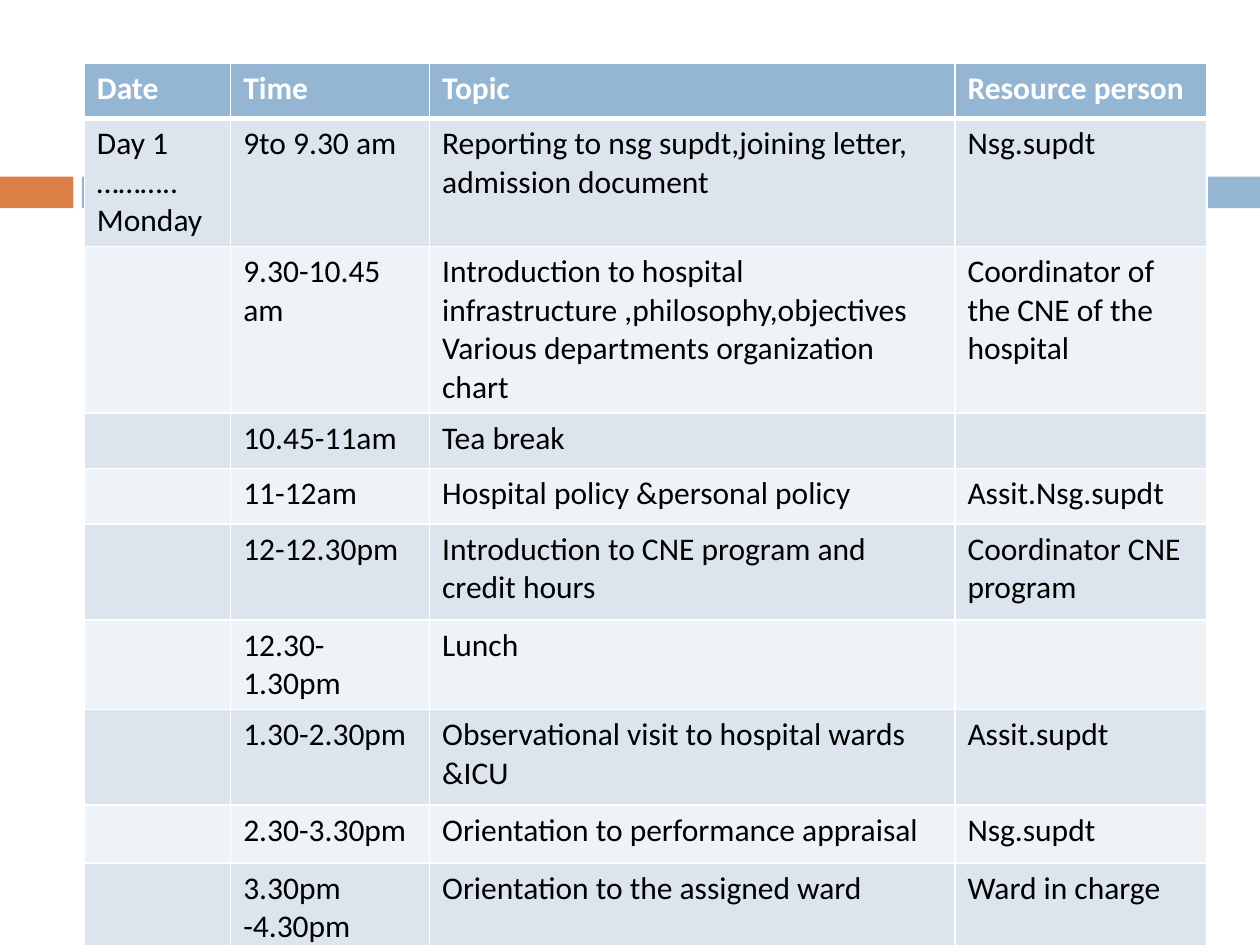
from lxml import etree
from pptx import Presentation
from pptx.dml.color import RGBColor
from pptx.enum.shapes import MSO_SHAPE
from pptx.oxml.ns import qn
from pptx.util import Cm, Pt

RECTANGLE = MSO_SHAPE.RECTANGLE
ORANGE = RGBColor(0xDD, 0x80, 0x47)
BLUE = RGBColor(0x94, 0xB6, 0xD2)
BAND_DARK = RGBColor(0xDC, 0xE5, 0xEE)
BAND_LIGHT = RGBColor(0xEE, 0xF3, 0xF7)
WHITE = RGBColor(0xFF, 0xFF, 0xFF)
BLACK = RGBColor(0, 0, 0)

COLUMN_WIDTHS = [2.95, 4.01, 10.59, 5.08]
ROW_HEIGHTS = [1.12, 2.39, 2.39, 1.12, 1.12, 1.93, 1.65, 1.93, 1.17, 1.93]
SCHEDULE = [
    ("Date", "Time", "Topic", "Resource person"),
    ("Day 1\n………..\nMonday", "9to 9.30 am",
     "Reporting to nsg supdt,joining letter, admission document", "Nsg.supdt"),
    ("", "9.30-10.45 am",
     "Introduction to hospital infrastructure ,philosophy,objectives\n"
     "Various departments organization chart",
     "Coordinator of the CNE of the hospital"),
    ("", "10.45-11am", "Tea break", ""),
    ("", "11-12am", "Hospital policy &personal policy", "Assit.Nsg.supdt"),
    ("", "12-12.30pm", "Introduction to CNE program and credit hours",
     "Coordinator CNE program"),
    ("", "12.30-1.30pm", "Lunch", ""),
    ("", "1.30-2.30pm", "Observational visit to hospital wards &ICU", "Assit.supdt"),
    ("", "2.30-3.30pm", "Orientation to performance appraisal", "Nsg.supdt"),
    ("", "3.30pm -4.30pm", "Orientation to the assigned ward", "Ward in charge"),
]


def add_bar(slide, left, width, color):
    sp = slide.shapes.add_shape(RECTANGLE, Cm(left), Cm(3.56), Cm(width), Cm(0.64))
    sp.shadow.inherit = False
    sp.fill.solid()
    sp.fill.fore_color.rgb = color
    sp.line.fill.background()


def write_text(tf, text, size=18, font="Calibri", color=BLACK, bold=False):
    """Write one paragraph for each line of text."""
    tf.text = text
    for p in tf.paragraphs:
        p.font.size = Pt(size)
        for r in p.runs:
            r.font.size = Pt(size)
            r.font.name = font
            r.font.color.rgb = color
            r.font.bold = bold


def set_borders(cell, bottom=1):
    """Draw white cell borders; bottom is the lower border's width in points."""
    tc_pr = cell._tc.get_or_add_tcPr()
    widths = {"a:lnL": 1, "a:lnR": 1, "a:lnT": 1, "a:lnB": bottom}
    for index, (tag, width) in enumerate(widths.items()):
        ln = etree.Element(qn(tag), w=str(Pt(width)))
        fill = etree.SubElement(ln, qn("a:solidFill"))
        etree.SubElement(fill, qn("a:srgbClr"), val=str(WHITE))
        tc_pr.insert(index, ln)


def add_schedule(slide):
    frame = slide.shapes.add_table(
        len(SCHEDULE), len(COLUMN_WIDTHS), Cm(1.7), Cm(1.27),
        Cm(sum(COLUMN_WIDTHS)), Cm(sum(ROW_HEIGHTS)))
    table = frame.table
    for column, width in zip(table.columns, COLUMN_WIDTHS):
        column.width = Cm(width)
    for i, (row, height, texts) in enumerate(zip(table.rows, ROW_HEIGHTS, SCHEDULE)):
        row.height = Cm(height)
        header = i == 0
        band = BLUE if header else BAND_DARK if i % 2 else BAND_LIGHT
        for cell, text in zip(row.cells, texts):
            cell.fill.solid()
            cell.fill.fore_color.rgb = band
            write_text(cell.text_frame, text,
                       color=WHITE if header else BLACK, bold=header)
            set_borders(cell, bottom=3 if header else 1)
    for cell in table.rows[1].cells:
        cell._tc.tcPr.find(qn("a:lnT")).set("w", str(Pt(3)))


def main():
    prs = Presentation()
    prs.slide_width, prs.slide_height = Cm(25.4), Cm(19.05)
    slide = prs.slides.add_slide(prs.slide_layouts[6])
    add_bar(slide, 0, 1.48, ORANGE)
    add_bar(slide, 1.65, 23.75, BLUE)
    add_schedule(slide)
    prs.save("out.pptx")


if __name__ == "__main__":
    main()
